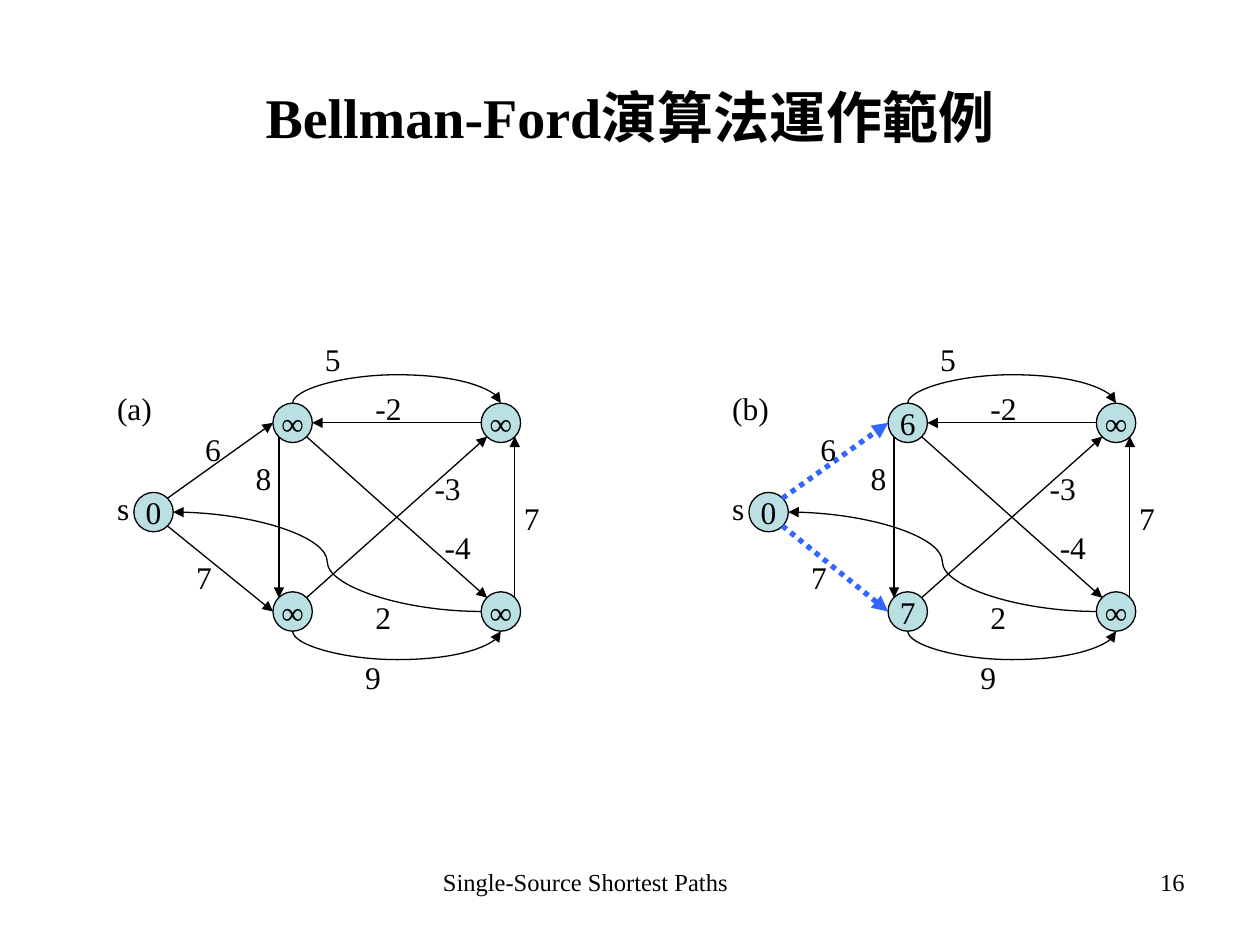
"""Build a slide with two stages of the Bellman-Ford algorithm."""
from lxml.etree import SubElement
from pptx import Presentation
from pptx.dml.color import RGBColor
from pptx.enum.dml import MSO_LINE
from pptx.enum.shapes import MSO_CONNECTOR, MSO_SHAPE
from pptx.enum.text import MSO_ANCHOR, PP_ALIGN
from pptx.oxml.ns import qn
from pptx.util import Pt


def write(sp, text, size=18, bold=False, align=PP_ALIGN.LEFT, anchor=MSO_ANCHOR.TOP, wrap=True):
    tf = sp.text_frame
    tf.word_wrap, tf.vertical_anchor = wrap, anchor
    p = tf.paragraphs[0]
    p.alignment = align
    r = p.add_run()
    r.text = text
    for key, value in {"name": "Times New Roman", "size": Pt(size), "bold": bold}.items():
        setattr(r.font, key, value)
    r.font.color.rgb = RGBColor.from_string("000000")


def arrow(kind, x1, y1, x2, y2, color="000000", width=0.75, dash=None):
    c = s.shapes.add_connector(kind, Pt(x1), Pt(y1), Pt(x2), Pt(y2))
    c.line.color.rgb = RGBColor.from_string(color)
    for key, value in {"width": Pt(width), "dash_style": dash}.items():
        setattr(c.line, key, value)
    SubElement(c.line._get_or_add_ln(), qn("a:tailEnd"), type="triangle")
    SubElement(c.element.spPr, qn("a:effectLst"))
    return c


prs = Presentation()
prs.slide_width, prs.slide_height = Pt(720), Pt(540)
s = prs.slides.add_slide(prs.slide_layouts[5])

title = s.shapes.title
for key, value in {"left": 36, "top": 21.6, "width": 648, "height": 90}.items():
    setattr(title, key, Pt(value))
write(title, "Bellman-Ford演算法運作範例", 32, True, PP_ALIGN.CENTER, MSO_ANCHOR.MIDDLE)

for text, x, w, align in [
    ("Single-Source Shortest Paths", 246, 228, PP_ALIGN.LEFT),
    ("16", 516, 168, PP_ALIGN.RIGHT),
]:
    write(s.shapes.add_textbox(Pt(x), Pt(492), Pt(w), Pt(37.5)), text, 14, align=align)

D = 22.5
LOW, MID, HIGH = 0.15, 0.5, 0.85
BULGE, THIN = 18, 0.125
nodes = {
    "source": (76.5, 281.4),
    "top left": (156, 230.4),
    "bottom left": (156, 338.2),
    "top right": (275, 230.4),
    "bottom right": (275, 338.2),
}
STRAIGHT, CURVE = MSO_CONNECTOR.STRAIGHT, MSO_CONNECTOR.CURVE
edges = [
    (STRAIGHT, "source", HIGH, LOW, "top left", 0, MID),
    (STRAIGHT, "source", HIGH, HIGH, "bottom left", 0, MID),
    (CURVE, "top right", 0, MID, "top left", 1, MID),
    (STRAIGHT, "top left", LOW, HIGH, "bottom left", LOW, LOW),
    (STRAIGHT, "bottom right", HIGH, LOW, "top right", HIGH, HIGH),
    (STRAIGHT, "top left", HIGH, HIGH, "bottom right", LOW, LOW),
    (STRAIGHT, "bottom left", HIGH, LOW, "top right", LOW, HIGH),
    (CURVE, "bottom right", 0, MID, "source", 1, MID),
]
labels = [
    ("6", 110.2, 242, 28), ("7", 105, 315.4, 28), ("8", 139, 258.5, 28),
    ("9", 201.6, 372.2, 28), ("2", 207.4, 338.4, 28), ("-3", 241.2, 264.2, 34),
    ("-4", 247, 298, 34), ("-2", 207.4, 218.9, 34), ("5", 178.6, 190.8, 34),
    ("7", 292.3, 281.5, 34), ("s", 59.8, 275.8, 22.5),
]
relaxed = {"color": "3366FF", "width": 3, "dash": MSO_LINE.ROUND_DOT}
panels = [("(a)", 0, "0∞∞∞∞", {}), ("(b)", 351.5, "067∞∞", relaxed)]

for name, dx, distances, source_style in panels:
    for (x, y), distance in zip(nodes.values(), distances):
        sp = s.shapes.add_shape(MSO_SHAPE.OVAL, Pt(x + dx), Pt(y), Pt(D), Pt(D))
        sp.shadow.inherit = False
        sp.fill.solid()
        sp.fill.fore_color.rgb = RGBColor.from_string("BBE0E3")
        sp.line.color.rgb = RGBColor.from_string("000000")
        sp.line.width = Pt(0.75)
        write(sp, distance, align=PP_ALIGN.CENTER, anchor=MSO_ANCHOR.MIDDLE, wrap=False)

    for kind, start, fx, fy, end, tx, ty in edges:
        (x1, y1), (x2, y2) = nodes[start], nodes[end]
        style = source_style if start == "source" else {}
        arrow(kind, x1 + fx * D + dx, y1 + fy * D, x2 + tx * D + dx, y2 + ty * D, **style)

    for row, side, flip in [("top", 0, 1), ("bottom", D, -1)]:
        (x1, y), (x2, _) = nodes[f"{row} left"], nodes[f"{row} right"]
        middle, half, y = (x1 + x2 + D) / 2 + dx, (x2 - x1) / 2, y + side
        c = arrow(CURVE, middle - flip * THIN / 2, y - half, middle + flip * THIN / 2, y + half)
        c.element.spPr.find(qn("a:xfrm")).set("rot", str(270 * 60000))
        guides = c.element.spPr.find(qn("a:prstGeom")).find(qn("a:avLst"))
        SubElement(guides, qn("a:gd"), name="adj1", fmla=f"val {int(BULGE / THIN * 100000)}")

    for text, x, y, w in [(name, 59.8, 218.9, 102)] + labels:
        write(s.shapes.add_textbox(Pt(x + dx), Pt(y), Pt(w), Pt(29)), text)

prs.save("out.pptx")
